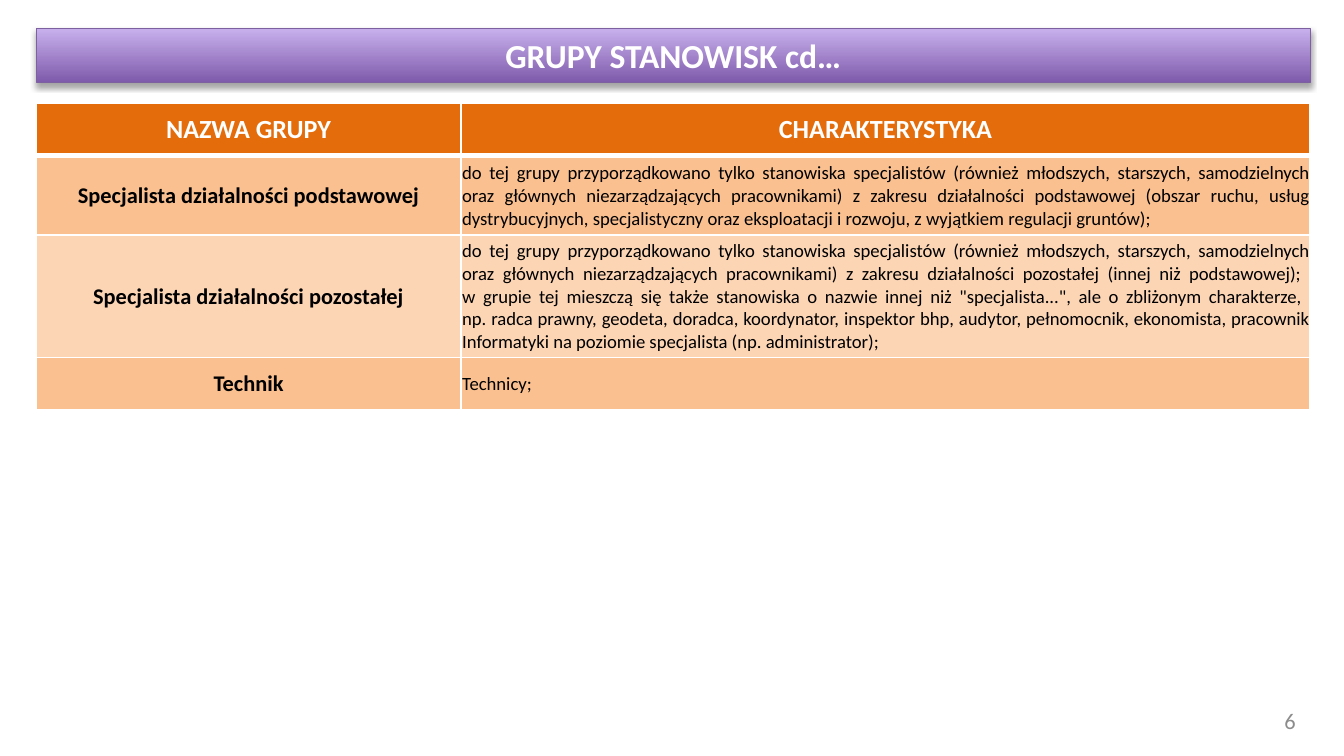
from lxml import etree
from pptx import Presentation
from pptx.dml.color import RGBColor
from pptx.enum.text import MSO_ANCHOR, MSO_AUTO_SIZE, PP_ALIGN
from pptx.oxml import parse_xml
from pptx.oxml.ns import nsdecls, qn
from pptx.util import Pt

LEFT, MID, RIGHT, JUST = PP_ALIGN.LEFT, PP_ALIGN.CENTER, PP_ALIGN.RIGHT, PP_ALIGN.JUSTIFY
CENTER = MSO_ANCHOR.MIDDLE
FIXED = MSO_AUTO_SIZE.NONE

EDGE, WIDTH = 19.44, 682.5
COLS = [227.5, 455]
ROWS = [28, 42.5, 65.5, 28]
HEADS = ["NAZWA GRUPY", "CHARAKTERYSTYKA"]
GROUPS = [
    ("Specjalista działalności podstawowej", JUST, [
        "do tej grupy przyporządkowano tylko stanowiska specjalistów (również młodszych, "
        "starszych, samodzielnych oraz głównych niezarządzających pracownikami) z zakresu "
        "działalności podstawowej (obszar ruchu, usług dystrybucyjnych, specjalistyczny oraz "
        "eksploatacji i rozwoju, z wyjątkiem regulacji gruntów);"]),
    ("Specjalista działalności pozostałej", JUST, [
        "do tej grupy przyporządkowano tylko stanowiska specjalistów (również młodszych, "
        "starszych, samodzielnych oraz głównych niezarządzających pracownikami) z zakresu "
        "działalności pozostałej (innej niż podstawowej); ",
        'w grupie tej mieszczą się także stanowiska o nazwie innej niż "specjalista...", '
        "ale o zbliżonym charakterze, ",
        "np. radca prawny, geodeta, doradca, koordynator, inspektor bhp, audytor, pełnomocnik, "
        "ekonomista, pracownik Informatyki na poziomie specjalista (np. administrator);"]),
    ("Technik", LEFT, ["Technicy;"]),
]


def color(code):
    return RGBColor.from_string(code)


class Deck:
    font = "Calibri"
    white, black, gray = "FFFFFF", "000000", "8C8C8C"
    dark, light, rim = "7F5BAB", "C8B0ED", "7D60A0"
    head, bands = "E46C0A", ["FAC090", "FCD5B5"]

    def __init__(self):
        self.file = Presentation()
        self.file.slide_width, self.file.slide_height = Pt(720), Pt(405)
        self.slide = self.file.slides.add_slide(self.file.slide_layouts[5])

    def text(self, frame, lines, size, tint, align, bold=False):
        """Fill the first paragraph, with a line break between lines."""
        para = frame.paragraphs[0]
        para.alignment = align
        for i, line in enumerate(lines):
            if i:
                para.add_line_break()
            run = para.add_run()
            run.text = line
            run.font.name, run.font.size, run.font.bold = self.font, Pt(size), bold
            run.font.color.rgb = color(tint)

    def title(self, words, x, y, w, h):
        box = self.slide.shapes.title
        box.left, box.top, box.width, box.height = Pt(x), Pt(y), Pt(w), Pt(h)
        box.fill.gradient()
        box.fill.gradient_angle = 90
        for stop, code in zip(box.fill.gradient_stops, [self.dark, self.light]):
            stop.color.rgb = color(code)
        box.line.color.rgb = color(self.rim)
        box.line.width = Pt(0.75)
        box.shadow.inherit = False
        box._element.spPr.find(qn("a:effectLst")).append(parse_xml(
            f'<a:outerShdw {nsdecls("a")} blurRad="{Pt(3.1)}" dist="{Pt(1.8)}" '
            f'dir="5400000" rotWithShape="0"><a:srgbClr val="{self.black}">'
            '<a:alpha val="35000"/></a:srgbClr></a:outerShdw>'))
        frame = box.text_frame
        frame.auto_size, frame.vertical_anchor = FIXED, CENTER
        self.text(frame, [words], 18, self.white, MID, True)

    def label(self, words, x, y, w, h):
        frame = self.slide.shapes.add_textbox(Pt(x), Pt(y), Pt(w), Pt(h)).text_frame
        frame.word_wrap, frame.vertical_anchor = True, CENTER
        self.text(frame, [words], 12, self.gray, RIGHT)

    def edges(self, cell, top, base):
        """Draw white cell borders, 1 pt wide at the sides."""
        props = cell._tc.get_or_add_tcPr()
        for side, width in zip("LRTB", [1, 1, top, base]):
            line = etree.SubElement(props, qn(f"a:ln{side}"), w=str(Pt(width)))
            fill = etree.SubElement(line, qn("a:solidFill"))
            etree.SubElement(fill, qn("a:srgbClr"), val=self.white)

    def cell(self, cell, lines, size, tint, align, bold, back, top=1, base=1):
        self.edges(cell, top, base)
        cell.fill.solid()
        cell.fill.fore_color.rgb = color(back)
        cell.vertical_anchor = CENTER
        self.text(cell.text_frame, lines, size, tint, align, bold)

    def table(self, x, y, cols, rows, heads, groups):
        grid = self.slide.shapes.add_table(
            len(rows), len(cols), Pt(x), Pt(y), Pt(sum(cols)), Pt(sum(rows))).table
        for col, width in zip(grid.columns, cols):
            col.width = Pt(width)
        for row, height in zip(grid.rows, rows):
            row.height = Pt(height)
        for c, words in enumerate(heads):
            self.cell(grid.cell(0, c), [words], 14, self.white, MID, True, self.head, base=3)
        for r, (name, align, lines) in enumerate(groups, 1):
            back = self.bands[(r - 1) % 2]
            top = 3 if r == 1 else 1
            pair = [grid.cell(r, c) for c in range(2)]
            for item in pair:
                item.margin_left = item.margin_right = item.margin_top = Pt(0.7)
                item.margin_bottom = 0
            self.cell(pair[0], [name], 12, self.black, MID, True, back, top)
            self.cell(pair[1], lines, 10, self.black, align, False, back, top)


def main():
    deck = Deck()
    deck.label("6", 498.25, 375, 203, 21.6)
    deck.table(EDGE, 55.5, COLS, ROWS, HEADS, GROUPS)
    deck.title("GRUPY STANOWISK cd…", EDGE, 15.1, WIDTH, 29.1)
    deck.file.save("out.pptx")


if __name__ == "__main__":
    main()
